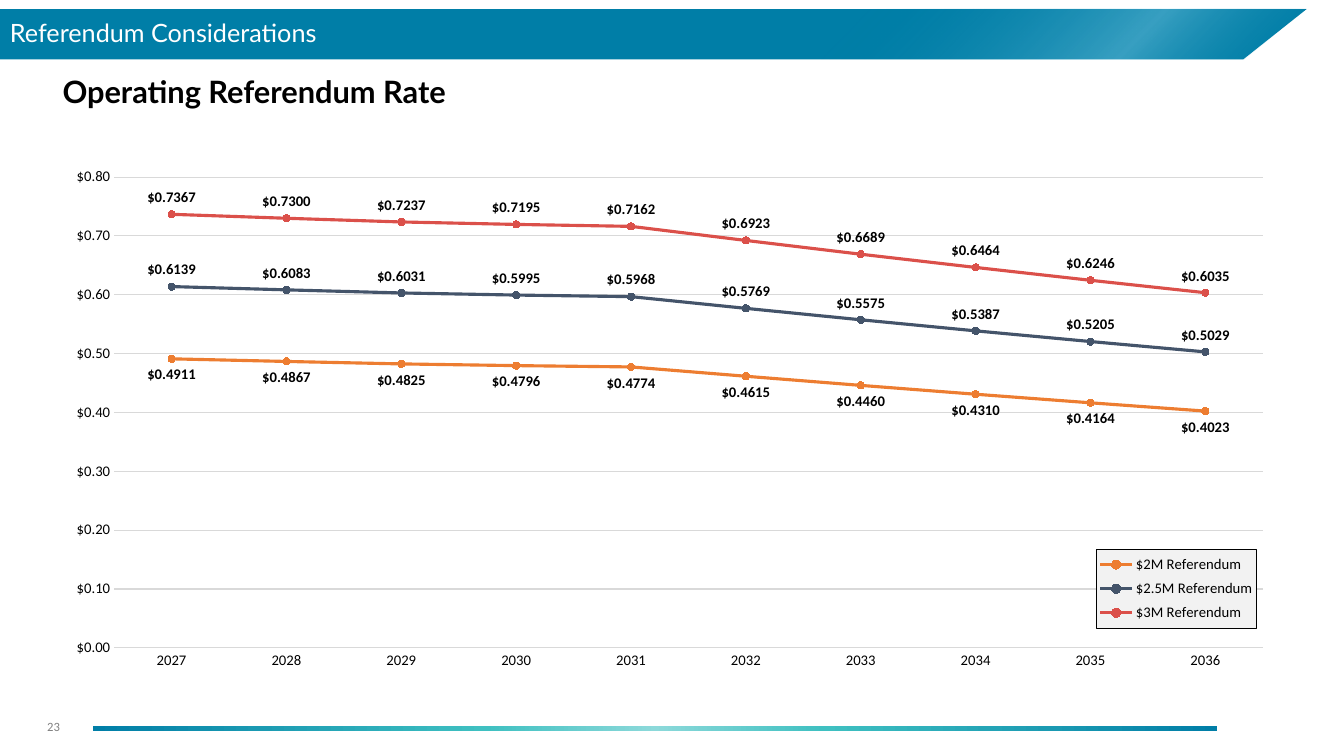
import pptx
import pptx.chart.data
import pptx.dml.color
import pptx.enum.chart
import pptx.enum.shapes
import pptx.enum.text
import pptx.oxml
import pptx.oxml.ns
import pptx.util

RGBColor = pptx.dml.color.RGBColor
Pt = pptx.util.Pt

WIDTH = pptx.util.Inches(13.33)
HEIGHT = pptx.util.Inches(7.5)

BLUE = RGBColor(0x00, 0x7E, 0xA7)
TEAL = RGBColor(0x3F, 0xC0, 0xC1)
AQUA = RGBColor(0x8C, 0xD9, 0xDA)
SHEEN = RGBColor(0xBA, 0xEE, 0xFF)
WHITE = RGBColor(0xFF, 0xFF, 0xFF)
BLACK = RGBColor(0x00, 0x00, 0x00)
GRAY = RGBColor(0x80, 0x80, 0x80)
GRID = RGBColor(0xD9, 0xD9, 0xD9)
PALE = RGBColor(0xF2, 0xF2, 0xF2)
ORANGE = RGBColor(0xED, 0x7D, 0x31)
SLATE = RGBColor(0x44, 0x54, 0x6A)
RED = RGBColor(0xDB, 0x50, 0x4A)

BELOW = pptx.enum.chart.XL_LABEL_POSITION.BELOW
ABOVE = pptx.enum.chart.XL_LABEL_POSITION.ABOVE
YEARS = [str(year) for year in range(2027, 2037)]
REFERENDUMS = [
    ("$2M Referendum", ORANGE, BELOW,
     (0.4911, 0.4867, 0.4825, 0.4796, 0.4774, 0.4615, 0.4460, 0.4310, 0.4164, 0.4023)),
    ("$2.5M Referendum", SLATE, ABOVE,
     (0.6139, 0.6083, 0.6031, 0.5995, 0.5968, 0.5769, 0.5575, 0.5387, 0.5205, 0.5029)),
    ("$3M Referendum", RED, ABOVE,
     (0.7367, 0.7300, 0.7237, 0.7195, 0.7162, 0.6923, 0.6689, 0.6464, 0.6246, 0.6035)),
]


def across(inches):
    return round(WIDTH * inches / 13.33)


def down(inches):
    return round(HEIGHT * inches / 7.5)


def area(left, top, width, height):
    return across(left), down(top), across(width), down(height)


def style_font(font, size, color, name="Calibri", bold=False):
    font.size = Pt(size)
    font.name = name
    font.bold = bold
    font.color.rgb = color


def set_gradient(shape, stops, angle):
    shape.fill.gradient()
    entries = "".join(
        f'<a:gs pos="{place * 1000}"><a:srgbClr val="{color}">'
        f'<a:alpha val="{opacity * 1000}"/></a:srgbClr></a:gs>'
        for place, color, opacity in stops)
    gradient = pptx.oxml.parse_xml(
        f'<a:gradFill {pptx.oxml.ns.nsdecls("a")} rotWithShape="1"><a:gsLst>{entries}</a:gsLst>'
        f'<a:lin ang="{angle * 60000}" scaled="0"/></a:gradFill>')
    properties = shape._element.spPr
    properties.replace(properties.find(pptx.oxml.ns.qn("a:gradFill")), gradient)


def add_band(page):
    corners = [(across(x), down(y)) for x, y in ((12.96, 0.09), (12.33, 0.59), (0, 0.59))]
    builder = page.shapes.build_freeform(0, down(0.09))
    builder.add_line_segments(corners, close=True)
    band = builder.convert_to_shape()
    band.shadow.inherit = False
    band.line.fill.background()
    return band


def add_footer_bar(page):
    bar = page.shapes.add_shape(
        pptx.enum.shapes.MSO_SHAPE.RECTANGLE, *area(0.92, 7.2, 11.15, 0.05))
    bar.shadow.inherit = False
    bar.line.fill.background()
    set_gradient(bar, [(0, BLUE, 100), (35, TEAL, 100), (50, AQUA, 100),
                       (65, TEAL, 100), (100, BLUE, 100)], 0)


def fill_text(box, text, size, color, name, bold=False,
              anchor=pptx.enum.text.MSO_ANCHOR.MIDDLE):
    frame = box.text_frame
    frame.text = text
    frame.word_wrap = True
    frame.vertical_anchor = anchor
    para = frame.paragraphs[0]
    para.alignment = pptx.enum.text.PP_ALIGN.LEFT
    para.line_spacing = 0.9
    style_font(para.runs[0].font, size, color, name, bold)


def manual_layout(left, top, width, height, inner=False):
    target = '<c:layoutTarget val="inner"/>' if inner else ""
    shares = "".join(f'<c:{tag} val="{share}"/>' for tag, share in
                     (("x", left), ("y", top), ("w", width), ("h", height)))
    return pptx.oxml.parse_xml(
        f'<c:layout {pptx.oxml.ns.nsdecls("c")}><c:manualLayout>{target}'
        f'<c:xMode val="edge"/><c:yMode val="edge"/>{shares}</c:manualLayout></c:layout>')


def place_part(part, layout, position):
    for old in part.findall(pptx.oxml.ns.qn("c:layout")):
        part.remove(old)
    part.insert(position, layout)


def format_axes(chart):
    none = pptx.enum.chart.XL_TICK_MARK.NONE
    for axis in (chart.category_axis, chart.value_axis):
        axis.major_tick_mark = none
        axis.minor_tick_mark = none
        style_font(axis.tick_labels.font, 10.5, BLACK)
    rates = chart.value_axis
    rates.minimum_scale, rates.maximum_scale, rates.major_unit = 0, 0.8, 0.1
    rates.tick_labels.number_format = '"$"#,##0.00'
    rates.tick_labels.number_format_is_linked = False
    rates.format.line.fill.background()
    for line in (chart.category_axis.format.line, rates.major_gridlines.format.line):
        line.color.rgb = GRID
        line.width = Pt(0.75)


def format_series(series, color, position):
    series.smooth = False
    series.format.line.color.rgb = color
    series.format.line.width = Pt(2.25)
    marker = series.marker
    marker.style = pptx.enum.chart.XL_MARKER_STYLE.CIRCLE
    marker.size = 5
    marker.format.fill.solid()
    marker.format.fill.fore_color.rgb = color
    marker.format.line.color.rgb = color
    labels = series.data_labels
    labels.show_value = True
    labels.position = position
    labels.number_format = '"$"#,##0.0000'
    labels.number_format_is_linked = False
    style_font(labels.font, 10.5, BLACK, bold=True)


def format_legend(chart):
    chart.has_legend = True
    legend = chart.legend
    legend.position = pptx.enum.chart.XL_LEGEND_POSITION.RIGHT
    legend.include_in_layout = False
    style_font(legend.font, 10.5, BLACK)
    part = legend._element
    place_part(part, manual_layout(0.845, 0.75, 0.13, 0.15), 1)
    overlay = part.find(pptx.oxml.ns.qn("c:overlay"))
    overlay.set("val", "1")
    overlay.addnext(pptx.oxml.parse_xml(
        f'<c:spPr {pptx.oxml.ns.nsdecls("c", "a")}>'
        f'<a:solidFill><a:srgbClr val="{PALE}"/></a:solidFill>'
        f'<a:ln w="9525"><a:solidFill><a:srgbClr val="{BLACK}"/></a:solidFill></a:ln></c:spPr>'))


def add_rate_chart(page):
    data = pptx.chart.data.CategoryChartData()
    data.categories = YEARS
    for name, color, position, rates in REFERENDUMS:
        data.add_series(name, rates)
    chart = page.shapes.add_chart(
        pptx.enum.chart.XL_CHART_TYPE.LINE_MARKERS, *area(0.52, 1.56, 12.25, 5.19), data).chart
    chart.has_title = False
    style_font(chart.font, 10.5, BLACK)
    chart.plots[0].vary_by_categories = False
    format_axes(chart)
    for series, (name, color, position, rates) in zip(chart.plots[0].series, REFERENDUMS):
        format_series(series, color, position)
    format_legend(chart)
    plot_area = chart._chartSpace.chart.plotArea
    place_part(plot_area, manual_layout(0.05, 0.038, 0.93, 0.9, inner=True), 0)


def main():
    deck = pptx.Presentation()
    deck.slide_width, deck.slide_height = WIDTH, HEIGHT
    page = deck.slides.add_slide(deck.slide_layouts[5])

    base = add_band(page)
    base.fill.solid()
    base.fill.fore_color.rgb = BLUE
    add_footer_bar(page)
    set_gradient(add_band(page), [(64, BLUE, 0), (86, SHEEN, 30), (100, BLUE, 0)], 45)

    title = page.shapes.title
    title.left, title.top, title.width, title.height = area(0.52, 0.71, 12.25, 0.5)
    fill_text(title, "Operating Referendum Rate", 22, BLACK, "Lato", True,
              pptx.enum.text.MSO_ANCHOR.TOP)
    header = page.shapes.add_textbox(*area(0, 0.09, 13.33, 0.5))
    fill_text(header, "Referendum Considerations", 18, WHITE, "Lato")
    number = page.shapes.add_textbox(*area(0.37, 7.02, 2.25, 0.4))
    fill_text(number, "23", 9, GRAY, "Calibri")

    add_rate_chart(page)
    deck.save("out.pptx")


if __name__ == "__main__":
    main()
